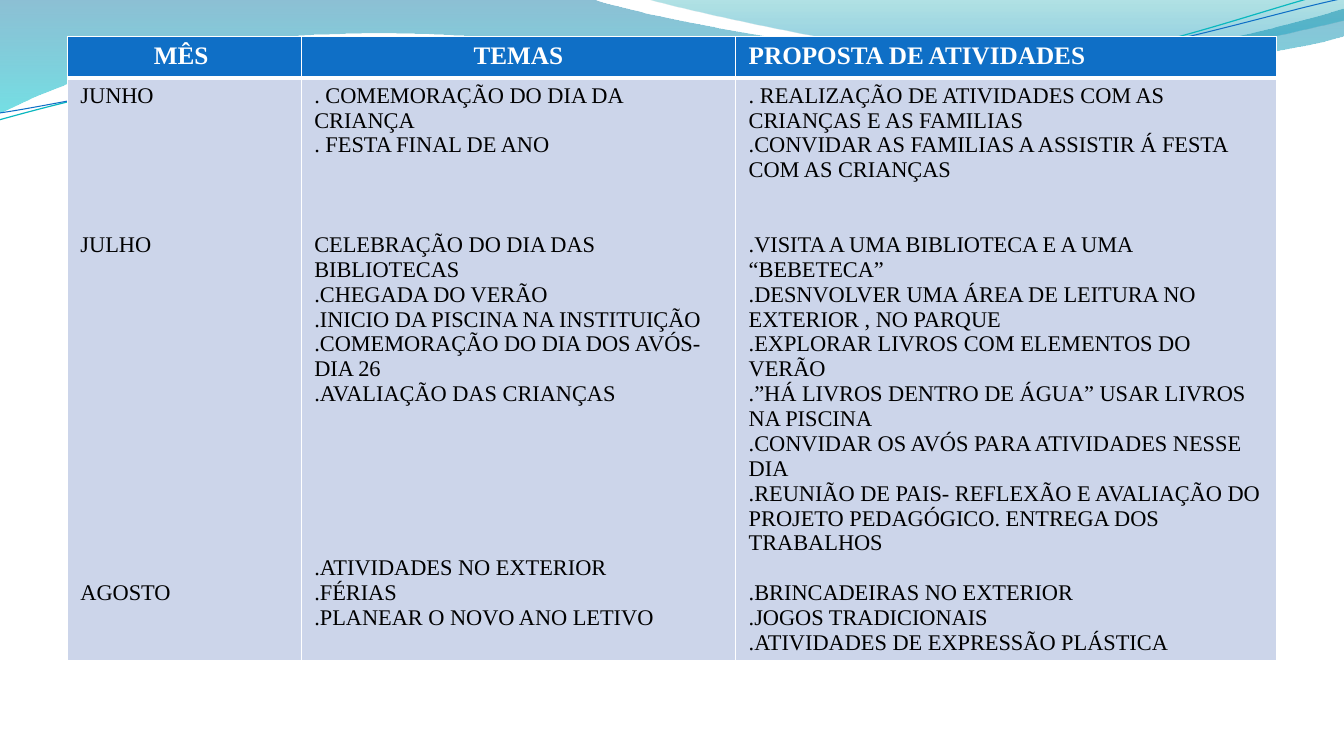
import math

import lxml.etree
import pptx
import pptx.dml.color
import pptx.enum.text
import pptx.oxml.ns
import pptx.util

Pt = pptx.util.Pt
RGBColor = pptx.dml.color.RGBColor
qn = pptx.oxml.ns.qn

WHITE = RGBColor(0xFF, 0xFF, 0xFF)
BLACK = RGBColor(0x00, 0x00, 0x00)
BLUE = RGBColor(0x0F, 0x6F, 0xC6)
TEAL = RGBColor(0x0A, 0xB8, 0xBF)
PALE = RGBColor(0xCC, 0xD5, 0xEA)
BAND_TOP = RGBColor(0x00, 0x74, 0xA1)
BAND_END = RGBColor(0x00, 0xC6, 0xCF)
INNER_TOP = RGBColor(0x00, 0xA1, 0xA9)
INNER_END = RGBColor(0x00, 0x8B, 0xBF)

FONT = "Times New Roman"
LINE = 17.75  # height of one body text line
WAVE_TILT = -2.7  # degrees
WAVE_CENTER = (478.8, 41.8)

# Outlines: pairs are straight segments, six numbers are Bezier curves
BAND = [(0, 0), (422.6, -0.7),
        (456.5, 12.2, 637.2, 45.4, 727.9, 45.4),
        (819.4, 45.4, 920.2, 18.7, 959.8, 6.5), (961.2, 25.9),
        (943.9, 31.7, 835.2, 54.7, 715.7, 54),
        (596.9, 54, 366.5, 20.2, 247, 24.5),
        (123.8, 25.9, 43.9, 59.8, -0.7, 81.4), (0, 0)]
INNER = [(460.1, -0.7), (488.9, 7.9, 654.5, 44.6, 738, 46.8),
         (821.5, 49.7, 923, 23, 959.8, 15.1), (959.8, 0), (460.1, -0.7)]
TEAL_WAVE = [(-0.7, 85.7), (46.1, 72.7, 151.9, 44.6, 265.7, 39.6),
             (379.4, 34.6, 568.8, 62.6, 684, 54.7),
             (799.2, 47.5, 901.4, 5.8, 958.3, -7.2)]
BLUE_WAVE = [(0, 80.6), (45.4, 74.2, 157, 47.5, 272.2, 42.5),
             (386.6, 38.2, 573.1, 59, 687.6, 51.8),
             (802.8, 44.6, 903.6, 10.1, 960.5, -1.4)]

# Each column: heading, then one (blank lines above, entries) group per month
COLUMNS = [
    ("MÊS ", [(0, ["JUNHO"]), (5, ["JULHO"]), (13, ["AGOSTO"])]),
    ("TEMAS", [
        (0, [". COMEMORAÇÃO DO DIA DA CRIANÇA", ". FESTA FINAL DE ANO"]),
        (3, ["CELEBRAÇÃO DO DIA DAS BIBLIOTECAS",
             ".CHEGADA DO VERÃO",
             ".INICIO DA PISCINA NA INSTITUIÇÃO",
             ".COMEMORAÇÃO DO DIA DOS AVÓS- DIA 26",
             ".AVALIAÇÃO DAS CRIANÇAS"]),
        (6, [".ATIVIDADES NO EXTERIOR", ".FÉRIAS",
             ".PLANEAR O NOVO ANO LETIVO"])]),
    ("PROPOSTA DE ATIVIDADES", [
        (0, [". REALIZAÇÃO DE ATIVIDADES COM AS CRIANÇAS E AS FAMILIAS",
             ".CONVIDAR AS FAMILIAS A ASSISTIR Á FESTA COM AS CRIANÇAS"]),
        (2, [".VISITA A UMA BIBLIOTECA E A UMA “BEBETECA”",
             ".DESNVOLVER UMA ÁREA DE LEITURA NO EXTERIOR , NO PARQUE",
             ".EXPLORAR LIVROS COM ELEMENTOS DO VERÃO",
             ".”HÁ LIVROS DENTRO DE ÁGUA” USAR LIVROS NA PISCINA",
             ".CONVIDAR OS AVÓS PARA ATIVIDADES NESSE DIA",
             ".REUNIÃO DE PAIS- REFLEXÃO E AVALIAÇÃO DO PROJETO "
             "PEDAGÓGICO. ENTREGA DOS TRABALHOS"]),
        (1, [".BRINCADEIRAS NO EXTERIOR", ".JOGOS TRADICIONAIS",
             ".ATIVIDADES DE EXPRESSÃO PLÁSTICA"])]),
]


def untilt(x, y):
    """Turn a point of a wave back to the frame it has before rotation."""
    cx, cy = WAVE_CENTER
    angle = math.radians(-WAVE_TILT)
    cos, sin = math.cos(angle), math.sin(angle)
    x, y = x - cx, y - cy
    return cx + x*cos - y*sin, cy + x*sin + y*cos


def add_outline(s, left, top, outline, tilt=0):
    points = [seg[i:i + 2] for seg in outline for i in range(0, len(seg), 2)]
    if tilt:
        points = [untilt(x, y) for x, y in points]
    points = [(Pt(left + x), Pt(top + y)) for x, y in points]
    builder = s.shapes.build_freeform(*points[0], scale=1.0)
    builder.add_line_segments(points[1:], close=not tilt)
    sp = builder.convert_to_shape()
    sp.shadow.inherit = False
    sp.rotation = tilt

    # Join each run of three points into one Bezier curve
    lines = iter(list(sp._element.spPr.iter(qn("a:lnTo"))))
    for seg in outline[1:]:
        first = next(lines)
        if len(seg) == 6:
            first.tag = qn("a:cubicBezTo")
            for _ in range(2):
                ln = next(lines)
                first.append(ln[0])
                ln.getparent().remove(ln)
    return sp


def add_header_waves(s, left, top):
    # Translucent gradient bands; stops are (position, colour, opacity %)
    bands = [(BAND, [(0, BAND_TOP, 45), (1, BAND_END, 55)]),
             (INNER, [(0, INNER_TOP, 30), (0.8, INNER_END, 45)])]
    for outline, stops in bands:
        sp = add_outline(s, left, top, outline)
        sp.line.fill.background()
        sp.fill.gradient()
        sp.fill.gradient_angle = 270
        for stop, (position, color, _) in zip(sp.fill.gradient_stops, stops):
            stop.position = position
            stop.color.rgb = color
        colors = sp._element.spPr.iter(qn("a:srgbClr"))
        for clr, (_, _, opacity) in zip(colors, stops):
            alpha = lxml.etree.SubElement(clr, qn("a:alpha"))
            alpha.set("val", str(opacity * 1000))

    # Thin wave lines
    for outline, color, width in [(TEAL_WAVE, TEAL, 0.85),
                                  (BLUE_WAVE, BLUE, 0.75)]:
        sp = add_outline(s, left, top, outline, WAVE_TILT)
        sp.fill.background()
        sp.line.color.rgb = color
        sp.line.width = Pt(width)


def style_cell(cell, fill, top, bottom):
    """Set margins, white borders and fill of a cell."""
    cell.margin_left = cell.margin_right = Pt(9.4)
    cell.margin_top = cell.margin_bottom = Pt(3.6)
    tcPr = cell._tc.get_or_add_tcPr()
    for side, width in [("L", 1), ("R", 1), ("T", top), ("B", bottom)]:
        ln = lxml.etree.SubElement(tcPr, qn("a:ln" + side))
        ln.set("w", str(Pt(width)))
        solid = lxml.etree.SubElement(ln, qn("a:solidFill"))
        lxml.etree.SubElement(solid, qn("a:srgbClr")).set("val", str(WHITE))
    cell.fill.solid()
    cell.fill.fore_color.rgb = fill


def style_text(p, size, color, bold):
    for r in p.runs:
        r.font.name = FONT
        r.font.size = Pt(size)
        r.font.color.rgb = color
        r.font.bold = bold


def add_plan_table(s, left, top, width, height):
    table = s.shapes.add_table(2, len(COLUMNS), Pt(left), Pt(top),
                               Pt(width), Pt(height)).table
    for col, share in zip(table.columns, [2.32, 4.31, 5.37]):
        col.width = Pt(width * share / 12)
    header_height = 29.5
    table.rows[0].height = Pt(header_height)
    table.rows[1].height = Pt(height - header_height)

    for i, (heading, groups) in enumerate(COLUMNS):
        # Heading
        cell = table.cell(0, i)
        style_cell(cell, BLUE, 1, 3)
        p = cell.text_frame.paragraphs[0]
        p.text = heading
        if i < 2:
            p.alignment = pptx.enum.text.PP_ALIGN.CENTER
        style_text(p, 18, WHITE, True)

        # Entries by month
        cell = table.cell(1, i)
        style_cell(cell, PALE, 3, 1)
        tf = cell.text_frame
        tf.text = "\n".join(e for _, entries in groups for e in entries)
        for p in tf.paragraphs:
            style_text(p, 16, BLACK, False)
        start = 0
        for blank_lines, entries in groups:
            if blank_lines:
                tf.paragraphs[start].space_before = Pt(blank_lines * LINE)
            start += len(entries)


def main():
    prs = pptx.Presentation()
    prs.slide_width, prs.slide_height = Pt(960), Pt(540)
    s = prs.slides.add_slide(prs.slide_layouts[6])
    add_header_waves(s, 0, 0)
    add_plan_table(s, 48.1, 26.3, 864, 445)
    prs.save("out.pptx")


if __name__ == "__main__":
    main()
